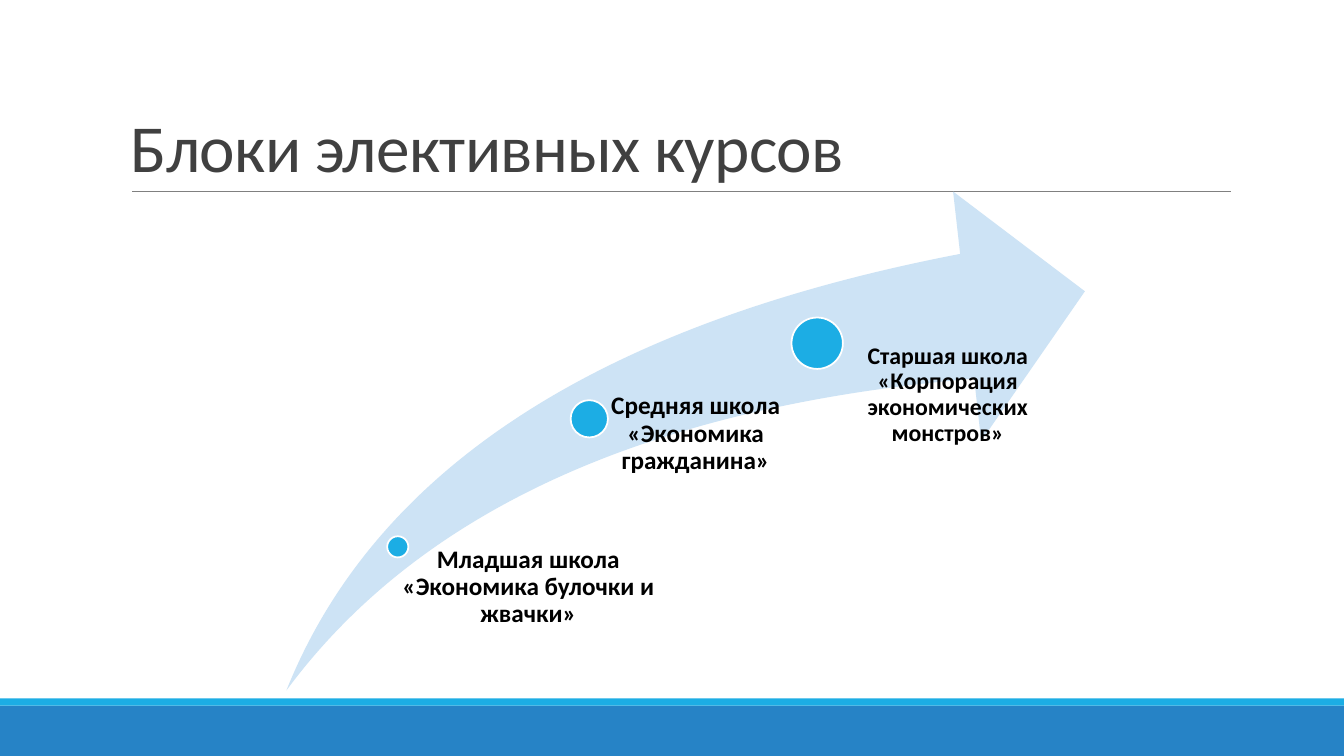
from pptx import Presentation
from pptx.dml.color import RGBColor
from pptx.enum.shapes import MSO_CONNECTOR, MSO_SHAPE
from pptx.enum.text import MSO_ANCHOR, PP_ALIGN
from pptx.oxml.ns import qn
from pptx.util import Inches, Pt

RECT, OVAL, SWOOSH = MSO_SHAPE.RECTANGLE, MSO_SHAPE.OVAL, MSO_SHAPE.SWOOSH_ARROW
LINE = MSO_CONNECTOR.STRAIGHT
TOP, BOTTOM = MSO_ANCHOR.TOP, MSO_ANCHOR.BOTTOM
LEFT, CENTER = PP_ALIGN.LEFT, PP_ALIGN.CENTER

WIDE, HIGH = 13.33, 7.5
BLUE, CYAN, PALE = "2683C6", "1CADE4", "CDE3F5"
WHITE, BLACK, DARK, GRAY = "FFFFFF", "000000", "404040", "808080"

# dot left, top, size; label box; left inset; font size; text
STAGES = [
    ((3.84, 5.32, 0.21), (3.81, 5.42, 2.75, 1.43), 0.11, 18,
     "Младшая школа «Экономика булочки и жвачки»"),
    ((5.66, 3.97, 0.37), (5.85, 3.9, 1.9, 2.42), 0.2, 18,
     "Средняя школа «Экономика гражданина»"),
    ((7.85, 3.15, 0.51), (7.82, 3.41, 2.89, 3.44), 0.27, 17,
     "Старшая школа «Корпорация экономических монстров»"),
]


def color(code):
    return RGBColor.from_string(code)


def apply(target, values):
    for name, value in values.items():
        setattr(target, name, value)


def add_form(slide, kind, box, fill, edge=None):
    form = slide.shapes.add_shape(kind, *map(Inches, box))
    form.shadow.inherit = False
    form.fill.solid()
    form.fill.fore_color.rgb = color(fill)
    if edge:
        form.line.color.rgb = color(edge)
        form.line.width = Pt(1.25)
    else:
        form.line.fill.background()
    return form


def add_rule(slide, start, end, ink):
    rule = slide.shapes.add_connector(LINE, *map(Inches, start + end))
    rule.line.color.rgb = color(ink)
    rule.line.width = Pt(0.5)
    props = rule._element.spPr
    props.append(props.makeelement(qn("a:effectLst"), {}))


def add_text(slide, box, text, size, ink, frame, para, bold=False):
    body = slide.shapes.add_textbox(*map(Inches, box)).text_frame
    apply(body, {"word_wrap": True, **frame})
    line = body.paragraphs[0]
    apply(line, para)
    run = line.add_run()
    run.text = text
    apply(run.font, {"name": "Calibri", "size": Pt(size), "bold": bold})
    run.font.color.rgb = color(ink)
    return run


def add_stage(slide, dot, box, inset, size, text):
    left, top, side = dot
    add_form(slide, OVAL, (left, top, side, side), CYAN, WHITE)
    frame = {"margin_left": Inches(inset), "margin_top": 0, "margin_right": 0,
             "margin_bottom": 0, "vertical_anchor": TOP}
    add_text(slide, box, text, size, BLACK, frame,
             {"alignment": CENTER, "line_spacing": 0.9}, True)


def main():
    deck = Presentation()
    apply(deck, {"slide_width": Inches(WIDE), "slide_height": Inches(HIGH)})
    slide = deck.slides.add_slide(deck.slide_layouts[6])

    # Footer bands and title rule
    add_form(slide, RECT, (0, 7, WIDE, 0.5), BLUE)
    add_form(slide, RECT, (0, 6.93, WIDE, 0.07), CYAN)
    add_rule(slide, (1.31, 1.9), (12.21, 1.9), GRAY)

    # Title
    title = add_text(slide, (1.2, 0.31, 11, 1.59), "Блоки элективных курсов", 48,
                     DARK, {"vertical_anchor": BOTTOM},
                     {"alignment": LEFT, "line_spacing": 0.85})
    title._r.get_or_add_rPr().set("spc", "-50")

    # Rising arrow with its school stages
    arrow = add_form(slide, SWOOSH, (2.84, 1.9, 7.92, 4.95), PALE)
    for spot in range(2):
        arrow.adjustments[spot] = 0.25
    for stage in STAGES:
        add_stage(slide, *stage)

    deck.save("out.pptx")


if __name__ == "__main__":
    main()
